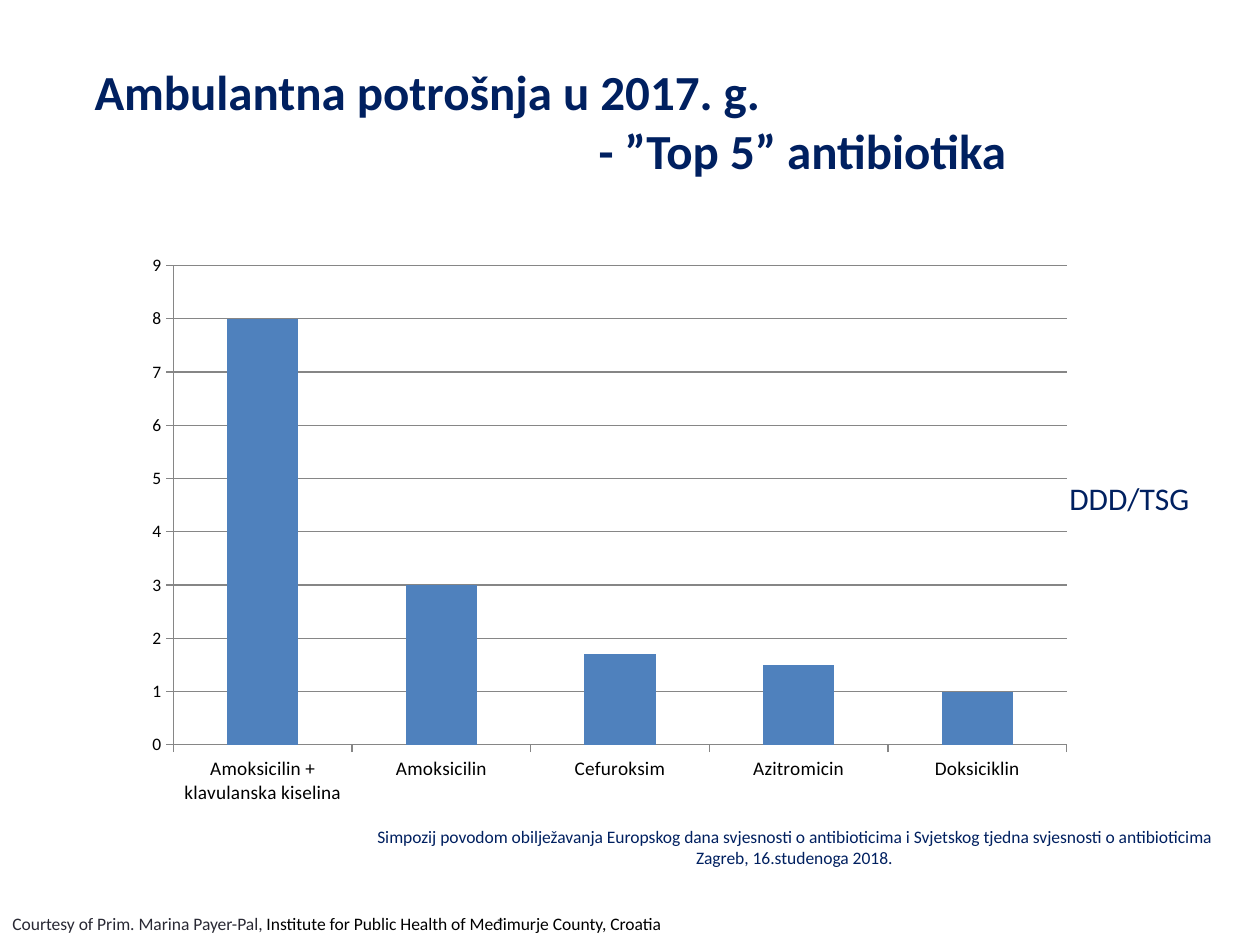
from lxml import etree
from pptx import Presentation
from pptx.chart.data import CategoryChartData
from pptx.dml.color import RGBColor
from pptx.enum.chart import XL_CHART_TYPE, XL_TICK_MARK
from pptx.enum.text import MSO_ANCHOR, MSO_AUTO_SIZE, PP_ALIGN
from pptx.oxml.ns import qn
from pptx.util import Pt

COLUMN = XL_CHART_TYPE.COLUMN_CLUSTERED
OUT = XL_TICK_MARK.OUTSIDE
TOP = MSO_ANCHOR.TOP
NO_FIT = MSO_AUTO_SIZE.NONE
LEFT, CENTER = PP_ALIGN.LEFT, PP_ALIGN.CENTER

NAVY = RGBColor(0x00, 0x20, 0x60)
DARK = RGBColor(0x29, 0x29, 0x34)
BLACK = RGBColor(0x00, 0x00, 0x00)
GRAY = RGBColor(0x86, 0x86, 0x86)
BLUE = RGBColor(0x4F, 0x81, 0xBD)


class Page:
    """Holds the style and the current slide."""

    face = "Calibri"

    def __init__(self, slide):
        self.slide = slide

    def style(self, font, size, color, bold=False):
        font.name, font.size, font.bold = self.face, Pt(size), bold
        font.color.rgb = color

    def place(self, shape, box):
        shape.left, shape.top, shape.width, shape.height = map(Pt, box)

    def fill_text(self, frame, lines, size, align=LEFT, bold=False):
        """Each line is a list of (text, color) runs."""
        frame.auto_size = NO_FIT
        frame.vertical_anchor = TOP
        for i, line in enumerate(lines):
            para = frame.add_paragraph() if i else frame.paragraphs[0]
            para.alignment = align
            for text, color in line:
                run = para.add_run()
                run.text = text
                self.style(run.font, size, color, bold)

    def title(self, box, lines, size, indent):
        shape = self.slide.shapes.title
        self.place(shape, box)
        frame = shape.text_frame
        self.fill_text(frame, lines, size, bold=True)
        # Indent the second line
        props = frame.paragraphs[1]._p.get_or_add_pPr()
        props.set("marL", str(Pt(indent)))

    def text(self, box, lines, size, align=LEFT, wrap=True):
        shape = self.slide.shapes.add_textbox(*map(Pt, box))
        shape.text_frame.word_wrap = wrap
        self.fill_text(shape.text_frame, lines, size, align)

    def rule(self, line):
        line.color.rgb = GRAY
        line.width = Pt(0.75)

    def axis(self, axis, size):
        axis.major_tick_mark = OUT
        self.style(axis.tick_labels.font, size, BLACK)
        self.rule(axis.format.line)

    def chart(self, box, names, vals, area):
        data = CategoryChartData()
        data.categories = names
        data.add_series("Series 1", vals)
        chart = self.slide.shapes.add_chart(COLUMN, *map(Pt, box), data).chart
        chart.has_title = chart.has_legend = False
        self.style(chart.font, 10, BLACK)

        # Axes and grid
        self.axis(chart.category_axis, 11)
        self.axis(chart.value_axis, 10)
        chart.value_axis.minimum_scale = 0
        chart.value_axis.maximum_scale = 9
        chart.value_axis.major_unit = 1
        self.rule(chart.value_axis.major_gridlines.format.line)

        # Columns
        plot = chart.plots[0]
        plot.gap_width = 150
        plot.vary_by_categories = False
        fill = plot.series[0].format.fill
        fill.solid()
        fill.fore_color.rgb = BLUE
        self.layout(chart, area)

    def layout(self, chart, area):
        """Set the plot area as fractions of the chart."""
        root = chart._chartSpace.chart.plotArea
        for old in root.findall(qn("c:layout")):
            root.remove(old)
        node = etree.Element(qn("c:layout"))
        root.insert(0, node)
        node = etree.SubElement(node, qn("c:manualLayout"))
        marks = [("layoutTarget", "outer"), ("xMode", "edge"), ("yMode", "edge")]
        for tag, val in marks + list(zip("xywh", area)):
            etree.SubElement(node, qn("c:" + tag)).set("val", str(val))


def main():
    deck = Presentation()
    deck.slide_width, deck.slide_height = Pt(720), Pt(540)
    page = Page(deck.slides.add_slide(deck.slide_layouts[5]))

    # Consumption chart with its unit
    page.chart(
        (76.3, 139.7, 538.6, 323.3),
        ["Amoksicilin + klavulanska kiselina", "Amoksicilin", "Cefuroksim",
         "Azitromicin", "Doksiciklin"],
        [8, 3, 1.7, 1.5, 1],
        (0.02, 0.02, 0.97, 0.97),
    )
    page.text((604, 270, 96.5, 29), [[("DDD/TSG", NAVY)]], 18)

    # Title
    page.title(
        (46.8, 31.7, 626.4, 75),
        [[("Ambulantna potrošnja u 2017. g.", NAVY)],
         [("- ”Top 5” antibiotika", NAVY)]],
        28, indent=288,
    )

    # Credit and event
    page.text(
        (0, 518.4, 392.4, 19.4),
        [[("Courtesy of Prim. Marina Payer-Pal,", DARK),
          (" Institute for Public Health of Međimurje County, Croatia", BLACK)]],
        10, wrap=False,
    )
    page.text(
        (195.8, 468.7, 516.2, 31.7),
        [[("Simpozij povodom obilježavanja Europskog dana svjesnosti o "
           "antibioticima i Svjetskog tjedna svjesnosti o antibioticima", NAVY)],
         [("Zagreb, 16.studenoga 2018.", NAVY)]],
        10, CENTER,
    )

    deck.save("out.pptx")


if __name__ == "__main__":
    main()
